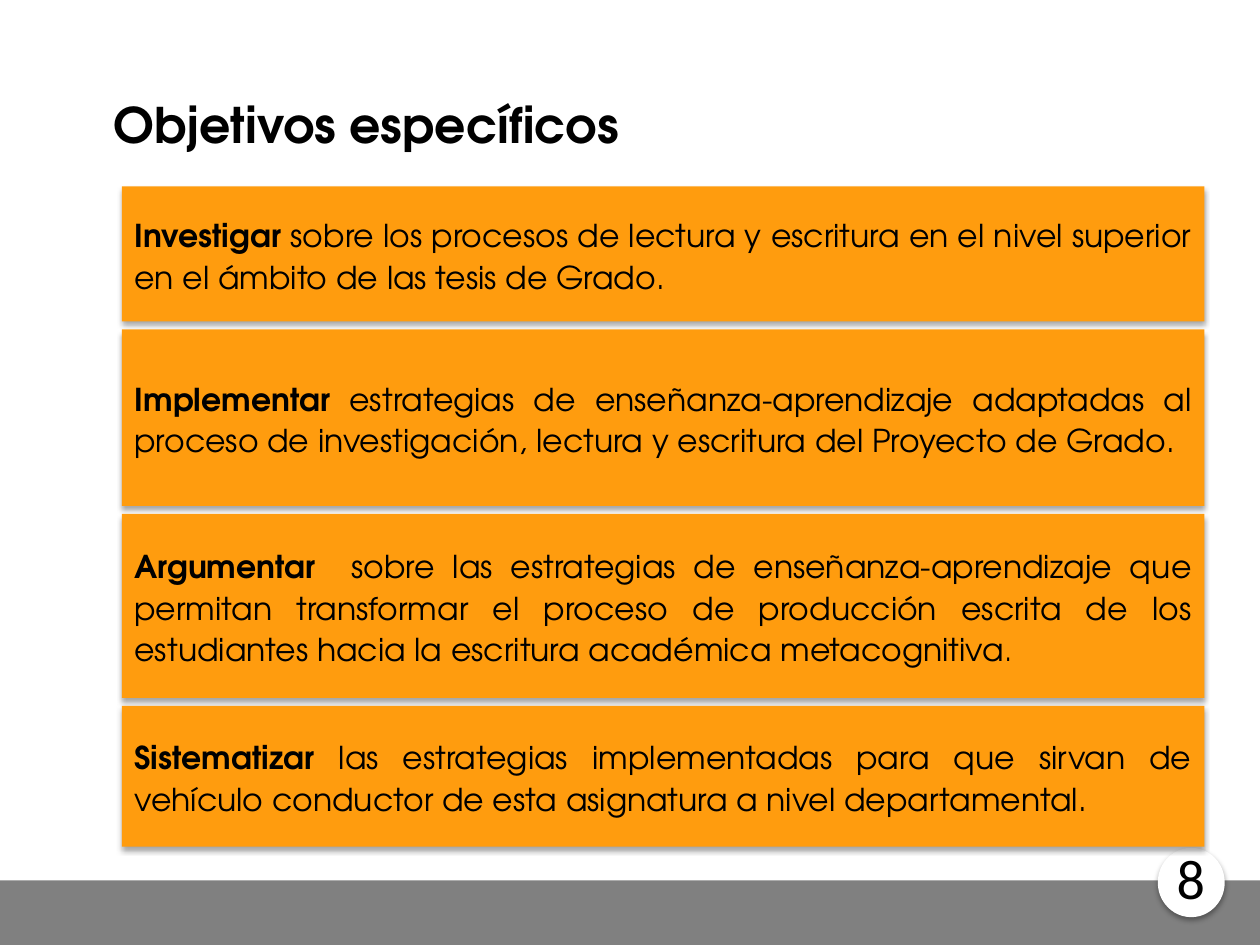
from dataclasses import dataclass

from lxml import etree
from pptx import Presentation
from pptx.dml.color import RGBColor
from pptx.enum import shapes, text
from pptx.oxml import ns
from pptx.util import Cm, Pt


@dataclass(frozen=True)
class Theme:
    ink: str = "000000"
    paper: str = "FFFFFF"
    objective: str = "FF9C0E"
    footer: str = "808080"
    font: str = "TeX Gyre Adventor"
    number_font: str = "Calibri"
    title_size: int = 28
    body_size: int = 18
    stop_size: int = 16
    number_size: int = 32


THEME = Theme()

# Height in cm, leading verb, rest of the sentence, size of the full stop
OBJECTIVES = [
    (2.72, "Investigar", " sobre los procesos de lectura y escritura en el nivel "
     "superior en el ámbito de las tesis de Grado", THEME.body_size),
    (3.56, "Implementar", " estrategias de enseñanza-aprendizaje adaptadas al proceso "
     "de investigación, lectura y escritura del Proyecto de Grado", THEME.body_size),
    (3.71, "Argumentar ", " sobre las estrategias de enseñanza-aprendizaje que permitan "
     "transformar el proceso de producción escrita de los estudiantes hacia la "
     "escritura académica metacognitiva", THEME.stop_size),
    (2.84, "Sistematizar ", "las estrategias implementadas para que sirvan de vehículo "
     "conductor de esta asignatura a nivel departamental", THEME.body_size),
]


def add_text(paragraph, words, size=THEME.body_size, bold=False, font=THEME.font):
    run = paragraph.add_run()
    run.text = words
    run.font.name = font
    run.font.size = Pt(size)
    run.font.bold = bold
    run.font.color.rgb = RGBColor.from_string(THEME.ink)


def add_shadow(shape):
    effects = etree.SubElement(shape.element.spPr, ns.qn("a:effectLst"))
    shadow = etree.SubElement(effects, ns.qn("a:outerShdw"), blurRad=str(Pt(3.1)),
                              dist=str(Pt(1.8)), dir="5400000", rotWithShape="0")
    color = etree.SubElement(shadow, ns.qn("a:srgbClr"), val=THEME.ink)
    etree.SubElement(color, ns.qn("a:alpha"), val="35000")


def add_block(slide, preset, left, top, width, height, fill, shadow=True):
    block = slide.shapes.add_shape(preset, Cm(left), Cm(top), Cm(width), Cm(height))
    block.fill.solid()
    block.fill.fore_color.rgb = RGBColor.from_string(fill)
    block.line.fill.background()
    if shadow:
        add_shadow(block)
    else:
        block.shadow.inherit = False
    return block


def set_title(slide, words):
    title = slide.shapes.title
    title.left, title.top, title.width, title.height = Cm(2.03), Cm(1.78), Cm(10.85), Cm(1.45)
    frame = title.text_frame
    frame.word_wrap = False
    frame.auto_size = text.MSO_AUTO_SIZE.SHAPE_TO_FIT_TEXT
    frame.paragraphs[0].alignment = text.PP_ALIGN.LEFT
    add_text(frame.paragraphs[0], words, size=THEME.title_size, bold=True)


def add_page_number(slide, number):
    add_block(slide, shapes.MSO_SHAPE.OVAL, 23.34, 17.09, 1.35, 1.4, THEME.paper)
    box = slide.shapes.add_textbox(Cm(23.72), Cm(16.99), Cm(0.56), Cm(1.37))
    frame = box.text_frame
    frame.margin_left = frame.margin_right = frame.margin_top = frame.margin_bottom = 0
    frame.word_wrap = False
    frame.auto_size = text.MSO_AUTO_SIZE.SHAPE_TO_FIT_TEXT
    frame.vertical_anchor = text.MSO_ANCHOR.MIDDLE
    add_text(frame.paragraphs[0], number, size=THEME.number_size, font=THEME.number_font)


def add_objective(slide, top, height, verb, sentence, stop_size):
    panel = add_block(slide, shapes.MSO_SHAPE.RECTANGLE, 2.46, top, 21.82, height,
                      THEME.objective)
    frame = panel.text_frame
    frame.word_wrap = True
    frame.vertical_anchor = text.MSO_ANCHOR.MIDDLE
    paragraph = frame.paragraphs[0]
    paragraph.alignment = text.PP_ALIGN.JUSTIFY
    paragraph.line_spacing = 1.1
    add_text(paragraph, verb, bold=True)
    if stop_size == THEME.body_size:
        add_text(paragraph, sentence + ".")
    else:
        add_text(paragraph, sentence)
        add_text(paragraph, ".", size=stop_size)


def main():
    deck = Presentation()
    deck.slide_width, deck.slide_height = Cm(25.4), Cm(19.05)
    slide = deck.slides.add_slide(deck.slide_layouts[5])

    # Footer band and page number
    add_block(slide, shapes.MSO_SHAPE.RECTANGLE, 0, 17.75, 25.4, 1.3, THEME.footer,
              shadow=False)
    add_page_number(slide, "8")

    # Title
    set_title(slide, "Objetivos específicos")

    # Objectives, stacked with an equal gap
    top, gap = 3.76, 0.16
    for height, verb, sentence, stop_size in OBJECTIVES:
        add_objective(slide, top, height, verb, sentence, stop_size)
        top += height + gap

    deck.save("out.pptx")


if __name__ == "__main__":
    main()
